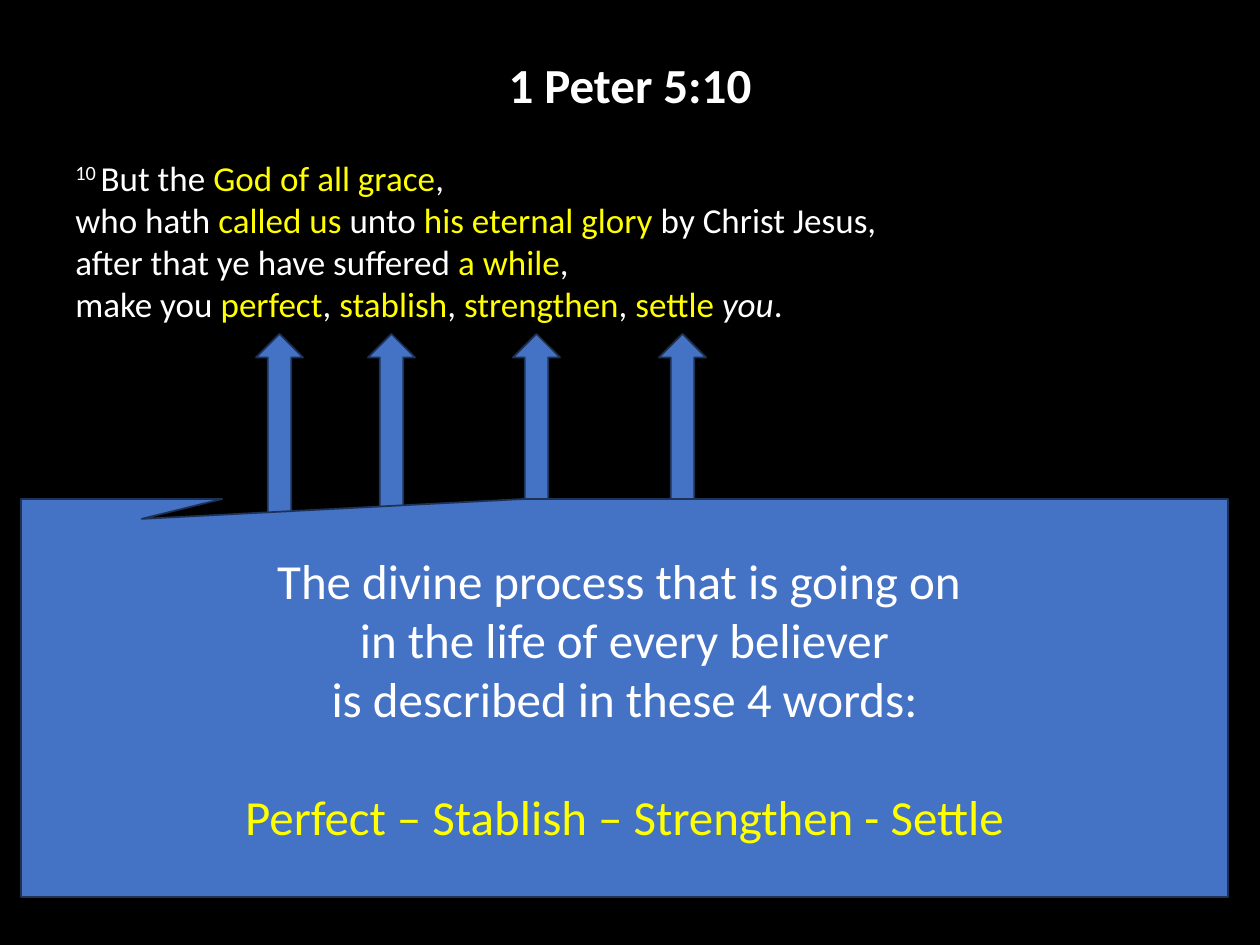
"""Build a slide on 1 Peter 5:10 with arrows from a callout to its four key words."""
import pptx
import pptx.dml.color
import pptx.enum.shapes
import pptx.enum.text
import pptx.util

PX = 914400 / 126
FONT = "Calibri"
WHITE, YELLOW, BLUE, NAVY, BLACK = "FFFFFF", "FFFF00", "4472C4", "1E3256", "000000"

TITLE = "1 Peter 5:10"
VERSE = [
    [("10 ", "super"), ("But the ", ""), ("God of all grace", "key"), (",", "")],
    [("who hath ", ""), ("called us ", "key"), ("unto ", ""),
     ("his eternal glory", "key"), (" by Christ Jesus,", "")],
    [("after that ye have suffered ", ""), ("a while", "key"), (",", "")],
    [("make you ", ""), ("perfect", "key"), (", ", ""), ("stablish", "key"), (", ", ""),
     ("strengthen", "key"), (", ", ""), ("settle ", "key"), ("you", "italic"), (".", "")],
]
MESSAGE = [
    [("The divine process that is going on ", "")],
    [("in the life of every believer", "")],
    [("is described in these 4 words:", "")],
    [("Perfect – Stablish – Strengthen - Settle", "key")],
]
ARROW_LEFTS = [256, 368, 513, 659]

SHAPES = pptx.enum.shapes.MSO_SHAPE
ALIGN = pptx.enum.text.PP_ALIGN
ANCHOR = pptx.enum.text.MSO_ANCHOR


def px(*lengths):
    return [round(length * PX) for length in lengths]


def color(code):
    return pptx.dml.color.RGBColor.from_string(code)


def write(frame, lines, size, align, bold=False):
    frame.word_wrap = True
    for index, line in enumerate(lines):
        paragraph = frame.paragraphs[0] if index == 0 else frame.add_paragraph()
        paragraph.alignment = align
        for words, style in line:
            run = paragraph.add_run()
            run.text = words
            run.font.name = FONT
            run.font.size = pptx.util.Pt(size)
            run.font.bold = bold
            run.font.italic = style == "italic"
            run.font.color.rgb = color(YELLOW if style == "key" else WHITE)
            if style == "super":
                run.font._element.set("baseline", "30000")


def add_blue_shape(slide, kind, *box):
    shape = slide.shapes.add_shape(kind, *px(*box))
    shape.shadow.inherit = False
    shape.fill.solid()
    shape.fill.fore_color.rgb = color(BLUE)
    shape.line.color.rgb = color(NAVY)
    shape.line.width = pptx.util.Pt(1)
    return shape


def main():
    deck = pptx.Presentation()
    deck.slide_width, deck.slide_height = px(1260, 945)
    slide = deck.slides.add_slide(deck.slide_layouts[5])
    slide.background.fill.solid()
    slide.background.fill.fore_color.rgb = color(BLACK)

    title = slide.shapes.title
    title.left, title.top, title.width, title.height = px(0, 48, 1260, 72)
    title.text_frame.auto_size = pptx.enum.text.MSO_AUTO_SIZE.NONE
    title.text_frame.vertical_anchor = ANCHOR.TOP
    write(title.text_frame, [[(TITLE, "")]], 28, ALIGN.CENTER, bold=True)

    verse = slide.shapes.add_textbox(*px(63, 150, 1197, 184))
    write(verse.text_frame, VERSE, 20, ALIGN.LEFT)

    for left in ARROW_LEFTS:
        add_blue_shape(slide, SHAPES.UP_ARROW, left, 334, 47, 203)

    callout = add_blue_shape(slide, SHAPES.RECTANGULAR_CALLOUT, 21, 499, 1207, 398)
    callout.adjustments[0] = -0.4
    callout.adjustments[1] = -0.45
    callout.text_frame.vertical_anchor = ANCHOR.MIDDLE
    write(callout.text_frame, MESSAGE, 28, ALIGN.CENTER)
    callout.text_frame.paragraphs[-1].space_before = pptx.util.Pt(34)

    deck.save("out.pptx")


if __name__ == "__main__":
    main()
